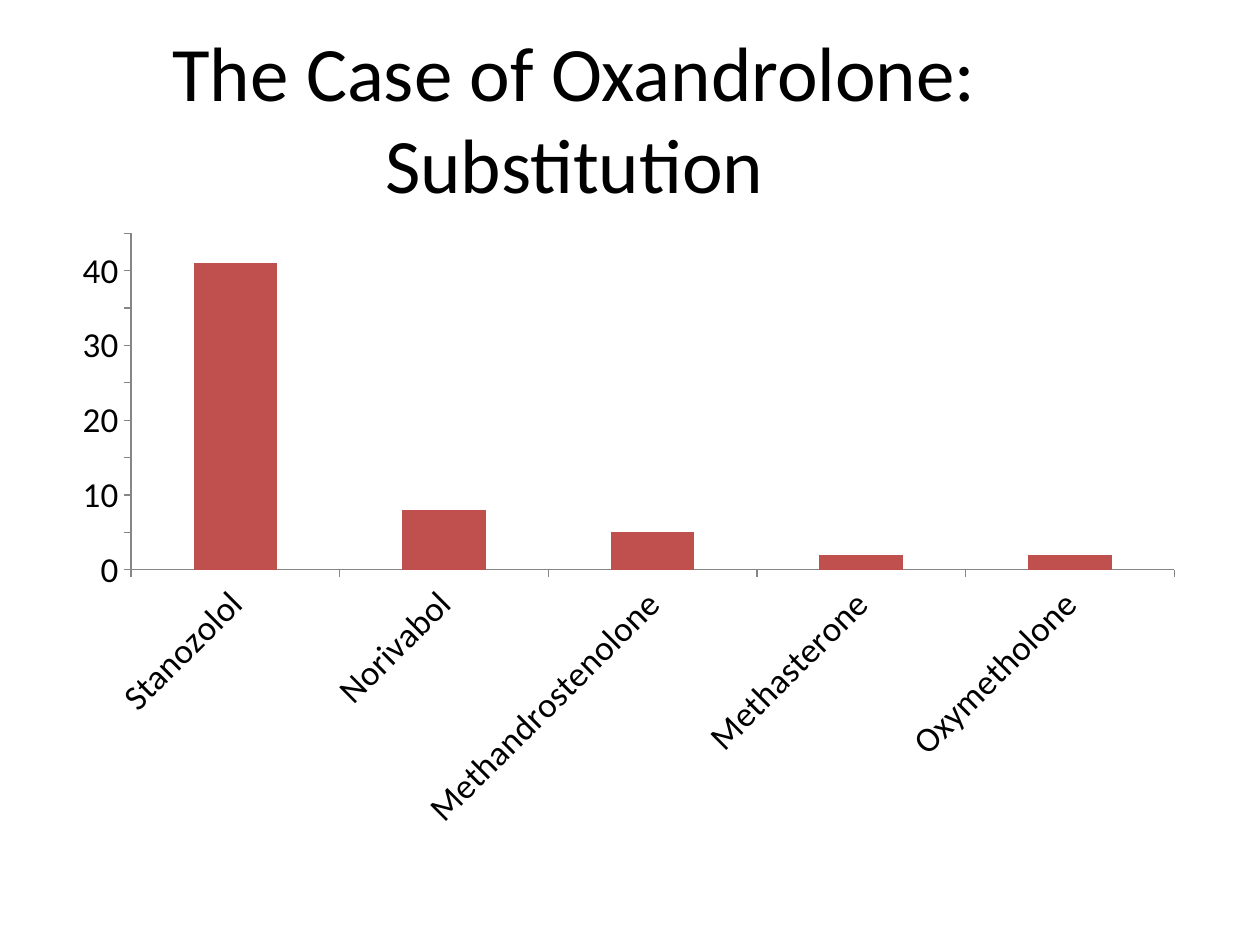
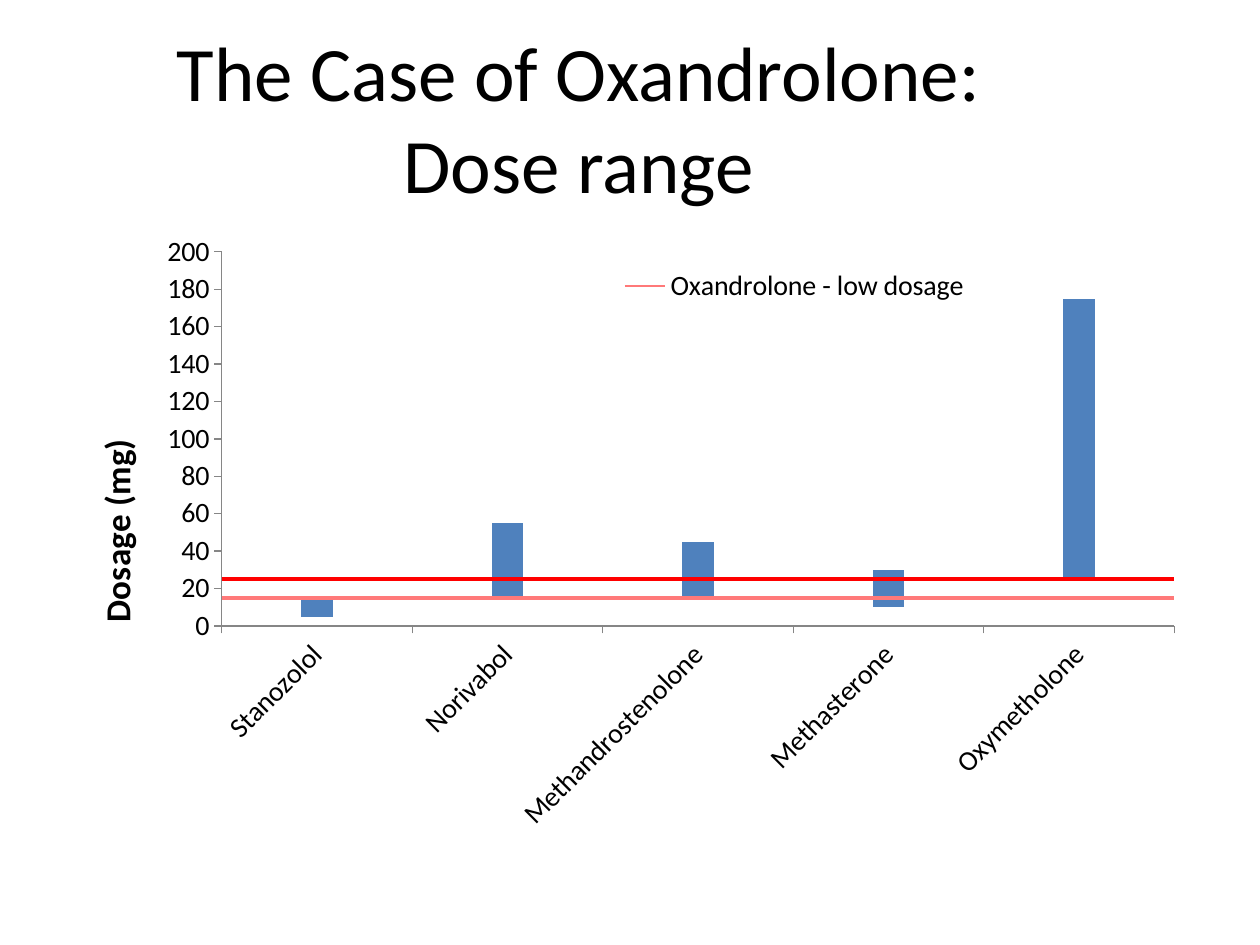
from copy import deepcopy
from dataclasses import dataclass
from typing import NamedTuple, Optional

from pptx import Presentation
from pptx.chart.data import CategoryChartData
from pptx.dml.color import RGBColor
from pptx.enum.chart import XL_CHART_TYPE, XL_LEGEND_POSITION, XL_MARKER_STYLE, XL_TICK_MARK
from pptx.enum.text import MSO_ANCHOR, MSO_AUTO_SIZE, PP_ALIGN
from pptx.oxml import parse_xml
from pptx.oxml.ns import nsdecls
from pptx.util import Cm, Pt


@dataclass(frozen=True)
class Theme:
    font: str = "Calibri"
    ink: str = "000000"
    axis: str = "868686"
    red: str = "C0504D"
    blue: str = "4F81BD"
    low: str = "FF7979"
    high: str = "FF0000"
    title_size: int = 44
    large: int = 20
    medium: int = 16
    base: int = 10
    thin: float = 0.75
    thick: float = 2.25


class Area(NamedTuple):
    """Place inside a chart, as shares of its width and height."""
    x: float
    y: float
    w: Optional[float] = None
    h: Optional[float] = None


class DataSeries(NamedTuple):
    name: str
    values: tuple
    color: Optional[str]
    is_line: bool = False


@dataclass(frozen=True)
class ChartPage:
    subject: str
    title_width: float
    kind: XL_CHART_TYPE
    series: tuple
    plot_area: Area
    label_size: int
    maximum: int
    unit: int
    gap: int
    overlap: int = 0
    axis_title: Optional[str] = None


THEME = Theme()
STEROIDS = ("Stanozolol", "Norivabol", "Methandrostenolone", "Methasterone", "Oxymetholone")
COUNT = len(STEROIDS)
LEGEND_AREA = Area(0.48, 0.07, 0.33, 0.07)
AXIS_TITLE_AREA = Area(0.02, 0.34)

PAGES = (
    ChartPage(
        "Substitution", 20.62, XL_CHART_TYPE.COLUMN_CLUSTERED,
        (DataSeries("Series 1", (41, 8, 5, 2, 2), THEME.red),),
        Area(0.06, 0.02, 0.92, 0.54), THEME.large, maximum=45, unit=5, gap=150),
    ChartPage(
        "Dose range", 20.8, XL_CHART_TYPE.COLUMN_STACKED,
        (DataSeries("Series 1", (5, 15, 15, 10, 25), None),
         DataSeries("Series 2", (10, 40, 30, 20, 150), THEME.blue),
         DataSeries("Oxandrolone - low dosage", (15,) * COUNT, THEME.low, True),
         DataSeries("Oxandrolone - high dosage", (25,) * COUNT, THEME.high, True)),
        Area(0.14, 0.05, 0.84, 0.6), THEME.medium, maximum=200, unit=20, gap=500,
        overlap=100, axis_title="Dosage (mg)"),
)


def format_font(font, size: float, bold: bool = False) -> None:
    font.name = THEME.font
    font.size = Pt(size)
    font.bold = bold
    font.color.rgb = RGBColor.from_string(THEME.ink)


def write_text(frame, text: str, *, size: float, bold: bool = False, align=None) -> None:
    frame.text = text
    para = frame.paragraphs[0]
    para.alignment = align
    for span in para.runs:
        format_font(span.font, size, bold)


def set_layout(parent, area: Area, after=None, inner: bool = False) -> None:
    """Give a chart part a fixed place."""
    for old in parent.xpath("c:layout"):
        parent.remove(old)
    target = '<c:layoutTarget val="inner"/>' if inner else ""
    modes = '<c:xMode val="edge"/><c:yMode val="edge"/>'
    sizes = "".join(f'<c:{key} val="{share}"/>'
                    for key, share in area._asdict().items() if share is not None)
    layout = parse_xml(f'<c:layout {nsdecls("c")}><c:manualLayout>{target}{modes}{sizes}'
                       '</c:manualLayout></c:layout>')
    if after is None:
        parent.insert(0, layout)
    else:
        after.addnext(layout)


def add_title(page, chart_page: ChartPage) -> None:
    box = page.shapes.title
    box.left, box.top = Cm(1.27), Cm(0.76)
    box.width, box.height = Cm(chart_page.title_width), Cm(3.18)
    frame = box.text_frame
    frame.word_wrap = True
    frame.auto_size = MSO_AUTO_SIZE.NONE
    frame.vertical_anchor = MSO_ANCHOR.MIDDLE
    write_text(frame, f"The Case of Oxandrolone:\v{chart_page.subject}",
               size=THEME.title_size, align=PP_ALIGN.CENTER)


def format_axes(chart, chart_page: ChartPage) -> None:
    for axis in (chart.category_axis, chart.value_axis):
        axis.has_major_gridlines = False
        axis.major_tick_mark = XL_TICK_MARK.OUTSIDE
        axis.minor_tick_mark = XL_TICK_MARK.NONE
        axis.format.line.color.rgb = RGBColor.from_string(THEME.axis)
        axis.format.line.width = Pt(THEME.thin)
        format_font(axis.tick_labels.font, chart_page.label_size)
    # Slanted category names
    chart.element.xpath(".//c:catAx/c:txPr/a:bodyPr")[0].set("rot", "-2700000")
    values = chart.value_axis
    values.minimum_scale, values.maximum_scale = 0, chart_page.maximum
    values.major_unit = chart_page.unit
    if chart_page.axis_title:
        write_text(values.axis_title.text_frame, chart_page.axis_title,
                   size=THEME.large, bold=True)
        title = chart.element.xpath(".//c:valAx/c:title")[0]
        title.xpath("c:tx/c:rich/a:bodyPr")[0].set("rot", "-5400000")
        set_layout(title, AXIS_TITLE_AREA, after=title.xpath("c:tx")[0])


def move_to_line_plot(chart, indexes: list) -> None:
    """Turn some of the column series into a line plot on the same axes."""
    columns = chart.element.xpath(".//c:barChart")[0]
    lines = parse_xml(f'<c:lineChart {nsdecls("c")}><c:grouping val="standard"/>'
                      '<c:varyColors val="0"/><c:marker val="1"/></c:lineChart>')
    marker = lines.xpath("c:marker")[0]
    all_series = columns.xpath("c:ser")
    for index in indexes:
        series = all_series[index]
        for flag in series.xpath("c:invertIfNegative"):
            series.remove(flag)
        marker.addprevious(series)
    for axis_id in columns.xpath("c:axId"):
        lines.append(deepcopy(axis_id))
    columns.addnext(lines)


def add_trend_line(chart, index: int, color: str) -> None:
    """Linear trend that runs half a category past both ends."""
    trend = parse_xml(
        f'<c:trendline {nsdecls("c", "a")}><c:spPr><a:ln w="{Pt(THEME.thick)}"><a:solidFill>'
        f'<a:srgbClr val="{color}"/></a:solidFill></a:ln></c:spPr>'
        '<c:trendlineType val="linear"/><c:forward val="0.5"/><c:backward val="0.5"/>'
        '<c:dispRSqr val="0"/><c:dispEq val="0"/></c:trendline>')
    chart.element.xpath(".//c:lineChart/c:ser")[index].xpath("c:cat")[0].addprevious(trend)


def add_low_dosage_legend(chart, shown: int, entry_count: int) -> None:
    chart.has_legend = True
    chart.legend.position = XL_LEGEND_POSITION.CORNER
    chart.legend.include_in_layout = True
    format_font(chart.legend.font, THEME.medium)
    legend = chart.element.xpath(".//c:legend")[0]
    last = legend.xpath("c:legendPos")[0]
    for index in range(entry_count):
        if index != shown:
            entry = parse_xml(f'<c:legendEntry {nsdecls("c")}><c:idx val="{index}"/>'
                              '<c:delete val="1"/></c:legendEntry>')
            last.addnext(entry)
            last = entry
    set_layout(legend, LEGEND_AREA, after=last)


def add_column_chart(page, chart_page: ChartPage) -> None:
    data = CategoryChartData()
    data.categories = STEROIDS
    for item in chart_page.series:
        data.add_series(item.name, item.values)
    chart = page.shapes.add_chart(chart_page.kind, Cm(1.27), Cm(4.45),
                                  Cm(22.86), Cm(12.57), data).chart
    chart.has_title = False
    chart.has_legend = False
    format_font(chart.font, THEME.base)
    format_axes(chart, chart_page)
    set_layout(chart.element.xpath(".//c:plotArea")[0], chart_page.plot_area, inner=True)

    # Columns
    line_indexes = [i for i, item in enumerate(chart_page.series) if item.is_line]
    if line_indexes:
        move_to_line_plot(chart, line_indexes)
    columns = chart.plots[0]
    columns.vary_by_categories = False
    columns.gap_width, columns.overlap = chart_page.gap, chart_page.overlap
    for series, item in zip(columns.series, chart_page.series):
        if item.color:
            series.format.fill.solid()
            series.format.fill.fore_color.rgb = RGBColor.from_string(item.color)
        else:
            series.format.fill.background()

    # Dosage lines
    if line_indexes:
        for position, (series, index) in enumerate(zip(chart.plots[1].series, line_indexes)):
            color = chart_page.series[index].color
            series.smooth = False
            series.marker.style = XL_MARKER_STYLE.NONE
            series.format.line.color.rgb = RGBColor.from_string(color)
            series.format.line.width = Pt(THEME.thin)
            add_trend_line(chart, position, color)
        add_low_dosage_legend(chart, line_indexes[0],
                              len(chart_page.series) + len(line_indexes))


def main() -> None:
    deck = Presentation()
    deck.slide_width, deck.slide_height = Cm(25.4), Cm(19.05)
    title_only = deck.slide_layouts[5]
    for chart_page in PAGES:
        page = deck.slides.add_slide(title_only)
        add_title(page, chart_page)
        add_column_chart(page, chart_page)
    deck.save("out.pptx")


if __name__ == "__main__":
    main()
